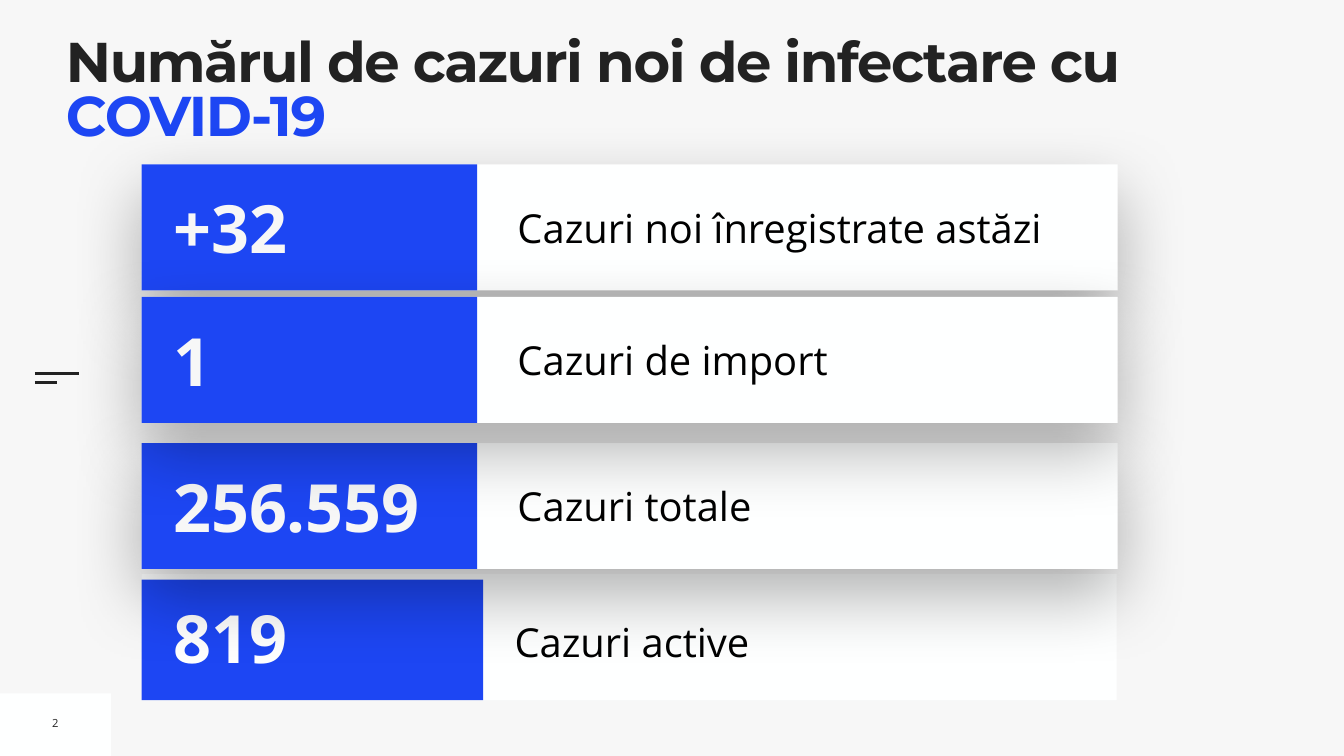
from lxml import etree
from pptx import Presentation, util as u
from pptx.dml.color import RGBColor
from pptx.enum import shapes, text
from pptx.oxml import ns

BLUE = RGBColor(0x1D, 0x46, 0xF3)
INK = RGBColor(0x22, 0x22, 0x22)
BLACK = RGBColor(0, 0, 0)
WHITE = RGBColor(255, 255, 255)
PANEL = RGBColor(0xFE, 0xFF, 0xFF)
PAPER = RGBColor(0xF7, 0xF7, 0xF7)


class SlideBuilder:
    heading_font = "Montserrat"
    body_font = "Open Sans"

    def __init__(self, slide):
        self.slide = slide
        self.target = slide.shapes

    def start_group(self):
        self.target = self.slide.shapes.add_group_shape().shapes

    def rectangle(self, left, top, width, height, color, shadow=False):
        shape = self.target.add_shape(
            shapes.MSO_SHAPE.RECTANGLE, *map(u.Inches, (left, top, width, height)))
        shape.fill.solid()
        shape.fill.fore_color.rgb = color
        shape.line.fill.background()
        shape.shadow.inherit = False
        if shadow:
            self.drop_shadow(shape)

    def drop_shadow(self, shape):
        effects = shape._element.spPr.find(ns.qn("a:effectLst"))
        outer = etree.SubElement(
            effects, ns.qn("a:outerShdw"), blurRad=str(u.Pt(100)),
            dist=str(u.Pt(40)), dir="5400000", algn="ctr", rotWithShape="0")
        color = etree.SubElement(outer, ns.qn("a:srgbClr"), val="000000")
        etree.SubElement(color, ns.qn("a:alpha"), val="30000")

    def line(self, left, top, length):
        connector = self.target.add_connector(
            shapes.MSO_CONNECTOR.STRAIGHT,
            *map(u.Inches, (left, top, left + length, top)))
        connector.line.color.rgb = INK
        connector.line.width = u.Pt(3)
        etree.SubElement(connector._element.spPr, ns.qn("a:effectLst"))

    def text(self, left, top, width, height, runs, size, font=body_font, bold=False,
             anchor=text.MSO_ANCHOR.MIDDLE, inset=0.1, wrap=True, tracking=None,
             **paragraph_format):
        box = self.target.add_textbox(*map(u.Inches, (left, top, width, height)))
        frame = box.text_frame
        frame_format = {"word_wrap": wrap, "vertical_anchor": anchor}
        for side in ("left", "top", "right", "bottom"):
            frame_format[f"margin_{side}"] = u.Inches(inset)
        for name, value in frame_format.items():
            setattr(frame, name, value)
        paragraph = frame.paragraphs[0]
        for name, value in paragraph_format.items():
            setattr(paragraph, name, value)
        for words, color in runs:
            run = paragraph.add_run()
            run.text = words
            for name, value in {"name": font, "size": u.Pt(size), "bold": bold}.items():
                setattr(run.font, name, value)
            run.font.color.rgb = color
            if tracking:
                run._r.get_or_add_rPr().set("spc", str(tracking * 100))


def main():
    presentation = Presentation()
    presentation.slide_width = u.Inches(26.67)
    presentation.slide_height = u.Inches(15)
    slide = presentation.slides.add_slide(presentation.slide_layouts[6])
    slide.background.fill.solid()
    slide.background.fill.fore_color.rgb = PAPER
    builder = SlideBuilder(slide)

    # Page number and margin mark
    builder.rectangle(0, 13.76, 2.2, 1.24, PANEL)
    builder.line(0.69, 7.41, 0.88)
    builder.line(0.69, 7.59, 0.44)
    builder.text(0.93, 14.09, 0.34, 0.51, [("2", INK)], 16, wrap=False,
                 alignment=text.PP_ALIGN.CENTER)

    # Title
    builder.text(1.31, 0.78, 23.94, 1.58,
                 [("Numărul de cazuri noi de infectare cu ", INK), ("COVID-19", BLUE)],
                 80, font=builder.heading_font, bold=True, anchor=text.MSO_ANCHOR.TOP,
                 inset=0, tracking=-2, line_spacing=0.8)

    # Active cases, the flat row at the bottom
    left = 2.81
    builder.start_group()
    builder.rectangle(left, 11.39, 19.35, 2.5, PANEL)
    builder.text(10.21, 11.97, 11.58, 1.25, [("Cazuri active", BLACK)], 57, inset=0,
                 line_spacing=1.3, space_before=u.Pt(20))
    builder.rectangle(left, 11.5, 6.78, 2.39, BLUE)
    builder.text(3.34, 11.74, 6.03, 1.8, [("819", WHITE)], 95, bold=True)

    # Raised rows, from back to front
    rows = [
        (3.26, "+32", "Cazuri noi înregistrate astăzi"),
        (8.79, "256.559", "Cazuri totale"),
        (5.89, "1", "Cazuri de import"),
    ]
    for top, count, label in rows:
        builder.start_group()
        builder.rectangle(left, top, 19.37, 2.5, PANEL, shadow=True)
        builder.text(10.17, top + 0.67, 11.76, 1.16, [(label, BLACK)], 57)
        builder.rectangle(left, top, 6.66, 2.5, BLUE)
        builder.text(3.34, top + 0.35, 6.03, 1.8, [(count, PAPER)], 95, bold=True)

    presentation.save("out.pptx")


if __name__ == "__main__":
    main()
